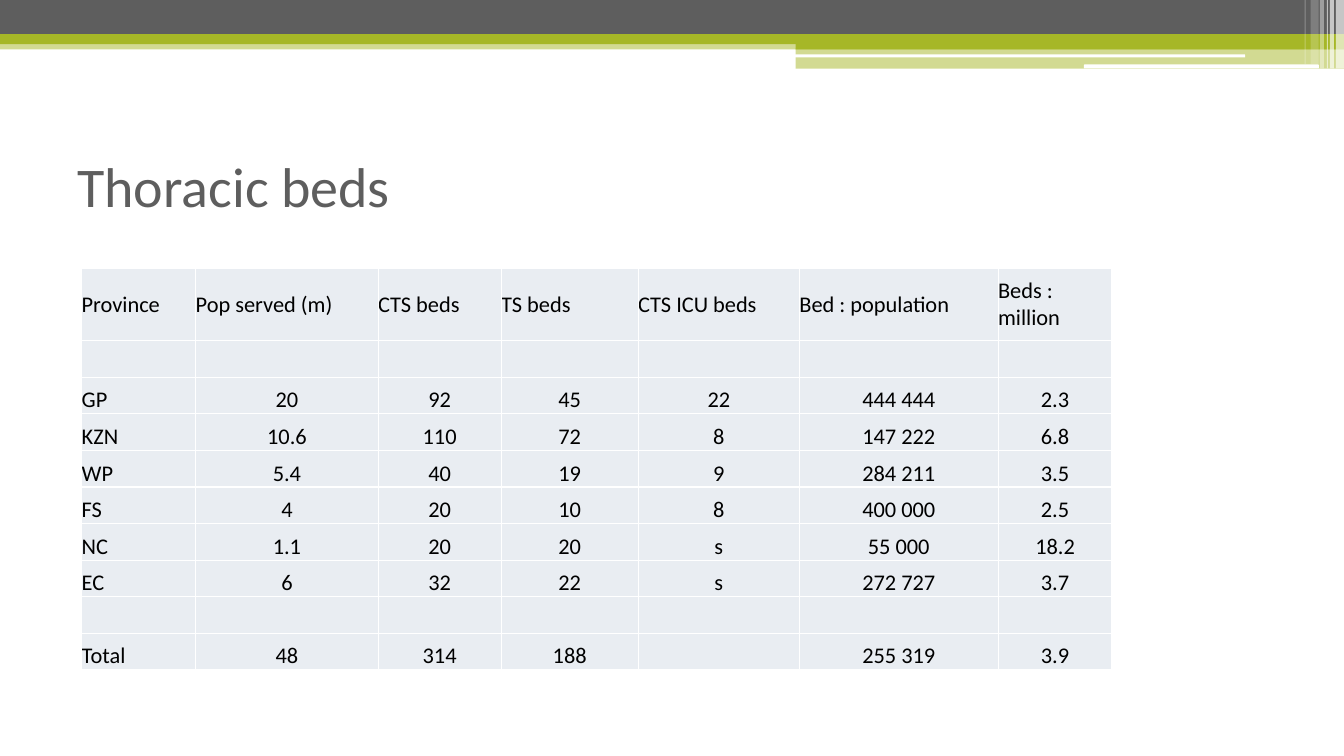
from pptx import Presentation
from pptx.dml.color import RGBColor
from pptx.enum.shapes import MSO_SHAPE as Shape
from pptx.enum.text import MSO_ANCHOR as Anchor, PP_ALIGN as Align
from pptx.oxml import parse_xml
from pptx.oxml.ns import nsdecls
from pptx.util import Inches, Pt

GREY = RGBColor(0x5E, 0x5E, 0x5E)
GREEN = RGBColor(0xA6, 0xB7, 0x27)
WHITE = RGBColor(0xFF, 0xFF, 0xFF)
BLACK = RGBColor(0x00, 0x00, 0x00)
PALE = RGBColor(0xE9, 0xED, 0xF2)

# Header bars: left, top, width, height, colour, opacity, in percent
BARS = [
    (0, 5.33, 100, 1.2, GREEN, 50),
    (0, 0, 100, 4.53, GREY, 100),
    (0, 4.53, 100, 1.33, GREEN, 100),
    (59.2, 5.2, 40.8, 1.33, GREEN, 100),
    (59.2, 6.4, 40.8, 2.67, GREEN, 50),
]
# Rounded white lines: left, top, width, height
LINES = [(59.12, 7.2, 33.53, 0.4), (80.65, 8.53, 17.48, 0.53)]
# Corner stripes: left, width, height, opacity
STRIPES = [
    (99.4, 0.6, 9.07, 65),
    (98.95, 0.3, 9.07, 65),
    (98.72, 0.08, 9.07, 60),
    (98.2, 0.3, 9.07, 40),
    (97.52, 0.6, 8.53, 20),
    (97.07, 0.08, 8.53, 30),
]
COLUMN_WIDTHS = [8.48, 13.58, 9.15, 10.2, 12, 14.78, 8.48]
ROW_HEIGHTS = [9.6] + [4.84] * 9
EMPTY_ROW = [""] * len(COLUMN_WIDTHS)
BEDS = [
    ["Province", "Pop served (m)", "CTS beds", "TS beds", "CTS ICU beds",
     "Bed : population", "Beds : million"],
    EMPTY_ROW,
    ["GP", "20", "92", "45", "22", "444 444", "2.3"],
    ["KZN", "10.6", "110", "72", "8", "147 222", "6.8"],
    ["WP", "5.4", "40", "19", "9", "284 211", "3.5"],
    ["FS", "4", "20", "10", "8", "400 000", "2.5"],
    ["NC", "1.1", "20", "20", "s", "55 000", "18.2"],
    ["EC", "6", "32", "22", "s", "272 727", "3.7"],
    EMPTY_ROW,
    ["Total", "48", "314", "188", "", "255 319", "3.9"],
]


class SlideBuilder:
    """Places elements on a page divided into 100 columns and 100 rows."""
    font = "Calibri"
    title_size = Pt(40)
    table_size = Pt(16)

    def __init__(self, deck):
        self.page = deck.slides.add_slide(deck.slide_layouts[5])
        self.column = deck.slide_width / 100
        self.row = deck.slide_height / 100

    def across(self, columns):
        return round(columns * self.column)

    def down(self, rows):
        return round(rows * self.row)

    def area(self, left, top, width, height):
        return (self.across(left), self.down(top),
                self.across(width), self.down(height))

    def add_span(self, para, text, size, color, align):
        para.alignment = align
        span = para.add_run()
        span.text = text
        span.font.name = self.font
        span.font.size = size
        span.font.bold = False
        span.font.color.rgb = color

    def title(self, text, *place):
        box = self.page.shapes.title
        box.left, box.top, box.width, box.height = self.area(*place)
        box.text_frame.vertical_anchor = Anchor.MIDDLE
        para = box.text_frame.paragraphs[0]
        self.add_span(para, text, self.title_size, GREY, Align.LEFT)

    def bar(self, *place, color=WHITE, opacity=100, kind=Shape.RECTANGLE):
        box = self.page.shapes.add_shape(kind, *self.area(*place))
        box.shadow.inherit = False
        box.line.fill.background()
        box.fill.solid()
        box.fill.fore_color.rgb = color
        if opacity < 100:
            tint = box.element.spPr.find(".//{*}srgbClr")
            tint.append(parse_xml(
                f'<a:alpha {nsdecls("a")} val="{opacity * 1000}"/>'))

    def border(self, cell):
        properties = cell._tc.get_or_add_tcPr()
        for side in "LRTB":
            properties.append(parse_xml(
                f'<a:ln{side} {nsdecls("a")} w="{Pt(1)}"><a:solidFill>'
                f'<a:srgbClr val="{WHITE}"/></a:solidFill></a:ln{side}>'))

    def table(self, left, top, widths, heights, rows):
        place = self.area(left, top, sum(widths), sum(heights))
        grid = self.page.shapes.add_table(
            len(heights), len(widths), *place).table
        for column, width in zip(grid.columns, widths):
            column.width = self.across(width)
        for line, height in zip(grid.rows, heights):
            line.height = self.down(height)
        for r, texts in enumerate(rows):
            for c, text in enumerate(texts):
                self.cell(grid.cell(r, c), text, r == 0, c == 0)

    def cell(self, cell, text, heading, first):
        self.border(cell)
        cell.fill.solid()
        cell.fill.fore_color.rgb = PALE
        cell.margin_left = cell.margin_right = 0
        cell.margin_top = cell.margin_bottom = 0
        cell.vertical_anchor = Anchor.MIDDLE if heading else Anchor.BOTTOM
        if text:
            align = Align.LEFT if heading or first else Align.CENTER
            para = cell.text_frame.paragraphs[0]
            self.add_span(para, text, self.table_size, BLACK, align)


def main():
    deck = Presentation()
    deck.slide_width, deck.slide_height = Inches(13.33), Inches(7.5)
    builder = SlideBuilder(deck)

    # Header band
    for *place, color, opacity in BARS:
        builder.bar(*place, color=color, opacity=opacity)
    for place in LINES:
        builder.bar(*place, kind=Shape.ROUNDED_RECTANGLE)
    for left, width, height, opacity in STRIPES:
        builder.bar(left, 0, width, height, opacity=opacity)

    # Title and table
    builder.title("Thoracic beds", 5, 16.67, 90, 15.6)
    builder.table(6.08, 35.47, COLUMN_WIDTHS, ROW_HEIGHTS, BEDS)

    deck.save("out.pptx")


if __name__ == "__main__":
    main()
